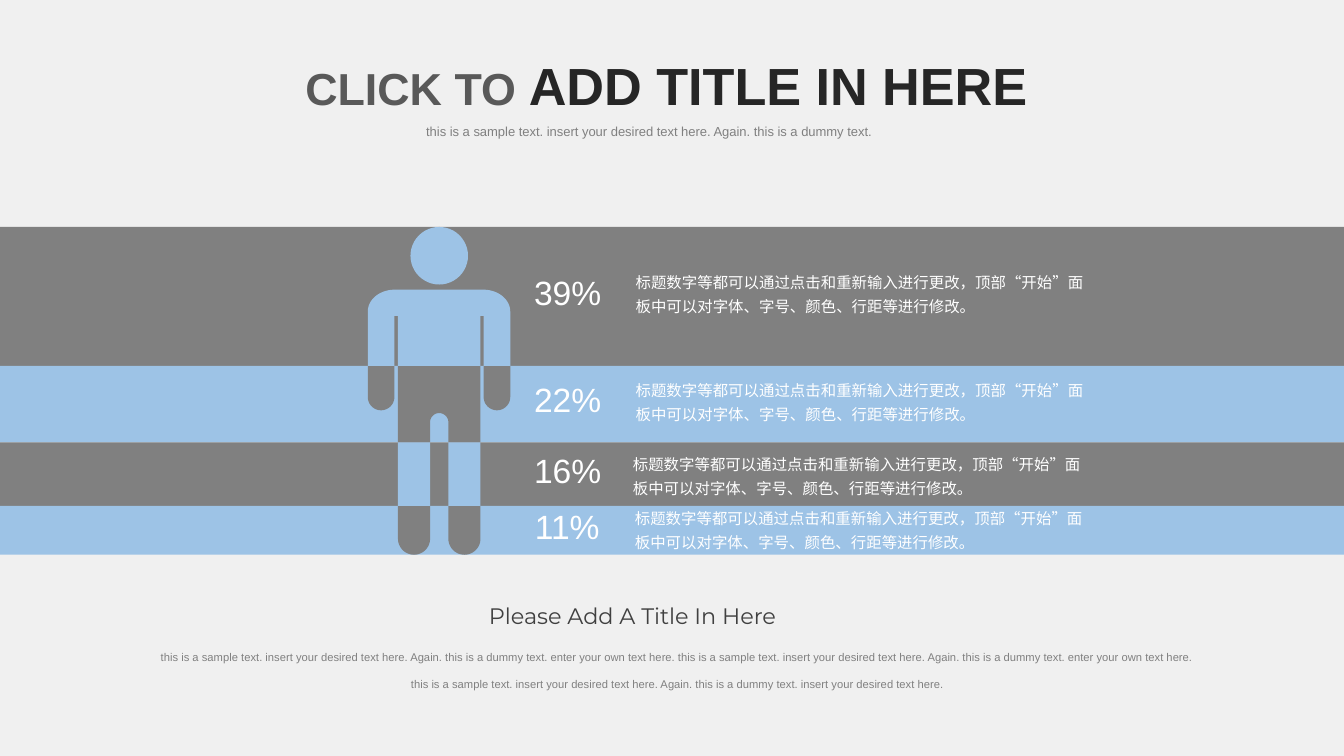
from math import cos, radians, sin

from lxml import etree
from pptx import Presentation
from pptx.dml.color import RGBColor
from pptx.enum.shapes import MSO_SHAPE
from pptx.enum.text import MSO_ANCHOR, MSO_AUTO_SIZE, PP_ALIGN
from pptx.oxml.ns import qn
from pptx.util import Cm, Pt

RECT, OVAL = MSO_SHAPE.RECTANGLE, MSO_SHAPE.OVAL
LEFT, CENTER = PP_ALIGN.LEFT, PP_ALIGN.CENTER
TOP, FIXED = MSO_ANCHOR.TOP, MSO_AUTO_SIZE.NONE

PAPER = RGBColor(0xF0, 0xF0, 0xF0)
GRAY = RGBColor(0x80, 0x80, 0x80)
BLUE = RGBColor(0x9D, 0xC3, 0xE6)
WHITE = RGBColor(0xFF, 0xFF, 0xFF)
BLACK = RGBColor(0x26, 0x26, 0x26)
DARK = RGBColor(0x40, 0x40, 0x40)
SLATE = RGBColor(0x59, 0x59, 0x59)
SANS, HAN, ROUND = "Arial", "Noto Sans CJK SC", "Montserrat"

# Content, lengths in cm
WIDTH, HEIGHT = 33.87, 19.05
TITLE = [("CLICK TO ", 32, SLATE), ("ADD TITLE IN HERE", 37.3, BLACK)]
SUB = ("this is a sample text. insert your desired text here. Again. "
       "this is a dummy text.")
HEAD = "Please Add A Title In Here"
BODY = ("this is a sample text. insert your desired text here. Again. "
        "this is a dummy text. enter your own text here. "
        "this is a sample text. insert your desired text here. Again. "
        "this is a dummy text. enter your own text here. "
        "this is a sample text. insert your desired text here. Again. "
        "this is a dummy text. insert your desired text here.")
NOTE = ("标题数字等都可以通过点击和重新输入进行更改，顶部“开始”"
        "面板中可以对字体、字号、颜色、行距等进行修改。")
EDGES = [5.72, 9.22, 11.15, 12.75, 13.98]
# share, left of share, left and top of note
ROWS = [("39%", 13.21, 15.77, 6.63), ("22%", 13.21, 15.77, 9.35),
        ("16%", 13.21, 15.70, 11.20), ("11%", 13.23, 15.75, 12.57)]
ARMS = [(9.27, 9.94), (12.19, 12.86)]
LEGS = [(10.03, 10.84), (11.30, 12.11)]
HAND_END, NECK, PIT, HIP = 10.34, 7.30, 7.96, 10.64
HEAD_SIZE = 1.45

deck = Presentation()
deck.slide_width, deck.slide_height = Cm(WIDTH), Cm(HEIGHT)
slide = deck.slides.add_slide(deck.slide_layouts[5])
slide.background.fill.solid()
slide.background.fill.fore_color.rgb = PAPER
shapes = slide.shapes


def paint(shape, color):
    shape.shadow.inherit = False
    shape.fill.solid()
    shape.fill.fore_color.rgb = color
    shape.line.fill.background()


def block(kind, x, y, w, h, color):
    paint(shapes.add_shape(kind, Cm(x), Cm(y), Cm(w), Cm(h)), color)


def outline(points, color):
    spots = [(Cm(x), Cm(y)) for x, y in points]
    form = shapes.build_freeform(*spots[0])
    form.add_line_segments(spots[1:])
    paint(form.convert_to_shape(), color)


def arc(x, y, rx, ry, start, end, steps=24):
    turns = [radians(start + (end - start) * i / steps)
             for i in range(steps + 1)]
    return [(x + rx * cos(t), y + ry * sin(t)) for t in turns]


def limb(x1, x2, top, end):
    r = (x2 - x1) / 2
    outline([(x1, top), (x2, top)]
            + arc((x1 + x2) / 2, end - r, r, r, 0, 180), GRAY)


def style(run, size, color, font):
    run.font.size = Pt(size)
    run.font.color.rgb = color
    run.font.name = font


def label(text, x, y, w, h, size, color, font=SANS, wrap=False,
          align=LEFT, space=None):
    frame = shapes.add_textbox(Cm(x), Cm(y), Cm(w), Cm(h)).text_frame
    frame.word_wrap = wrap
    frame.text = text
    para = frame.paragraphs[0]
    para.alignment = align
    if space:
        para.line_spacing = space
    run = para.runs[0]
    style(run, size, color, font)
    if font == HAN:
        props = run._r.get_or_add_rPr()
        etree.SubElement(props, qn("a:ea")).set("typeface", HAN)


# Title and subtitle
title = shapes.title
title.left, title.top = Cm(7.44), Cm(1.22)
title.width, title.height = Cm(18.90), Cm(1.85)
frame = title.text_frame
frame.word_wrap, frame.auto_size = False, FIXED
frame.vertical_anchor = TOP
para = frame.paragraphs[0]
para.alignment = LEFT
for text, size, color in TITLE:
    run = para.add_run()
    run.text = text
    style(run, size, color, SANS)
    run.font.bold = True
label(SUB, 10.49, 3.00, 12.17, 0.66, 9.3, GRAY)

# Bands
for i, (top, end) in enumerate(zip(EDGES, EDGES[1:])):
    block(RECT, 0, top, WIDTH, end - top, BLUE if i % 2 else GRAY)

# Figure: feet, hands, hips, thighs, head, chest
crown, waist, thigh, shin, sole = EDGES
(arm_l, inner_l), (inner_r, arm_r) = ARMS
(hip_l, gap_l), (gap_r, hip_r) = LEGS
mid, gap = (gap_l + gap_r) / 2, (gap_r - gap_l) / 2
for x1, x2 in LEGS:
    limb(x1, x2, shin, sole)
for x1, x2 in ARMS:
    limb(x1, x2, waist, HAND_END)
outline([(hip_l, waist), (hip_r, waist), (hip_r, thigh), (gap_r, thigh)]
        + arc(mid, HIP, gap, gap, 0, -180)
        + [(gap_l, thigh), (hip_l, thigh)], GRAY)
for x1, x2 in LEGS:
    block(RECT, x1, thigh, x2 - x1, shin - thigh, BLUE)
block(OVAL, mid - HEAD_SIZE / 2, crown, HEAD_SIZE, HEAD_SIZE, BLUE)
rx, ry = 0.68, 0.55
outline(arc(arm_l + rx, NECK + ry, rx, ry, 180, 270)
        + arc(arm_r - rx, NECK + ry, rx, ry, 270, 360)
        + [(arm_r, waist), (inner_r, waist), (inner_r, PIT), (hip_r, PIT),
           (hip_r, waist), (hip_l, waist), (hip_l, PIT), (inner_l, PIT),
           (inner_l, waist), (arm_l, waist)], BLUE)

# Shares and notes
for (share, left, note_x, note_y), top, end in zip(ROWS, EDGES, EDGES[1:]):
    label(share, left, (top + end) / 2 - 0.75, 2.24, 1.27, 24, WHITE)
    label(NOTE, note_x, note_y, 12.01, 1.47, 11, WHITE, HAN, True, space=1.3)

# Closing text
label(BODY, 3.58, 15.95, 27.00, 1.60, 8, GRAY, wrap=True, align=CENTER,
      space=Pt(18.7))
label(HEAD, 12.07, 15.04, 8.74, 0.94, 16, DARK, ROUND)

deck.save("out.pptx")
